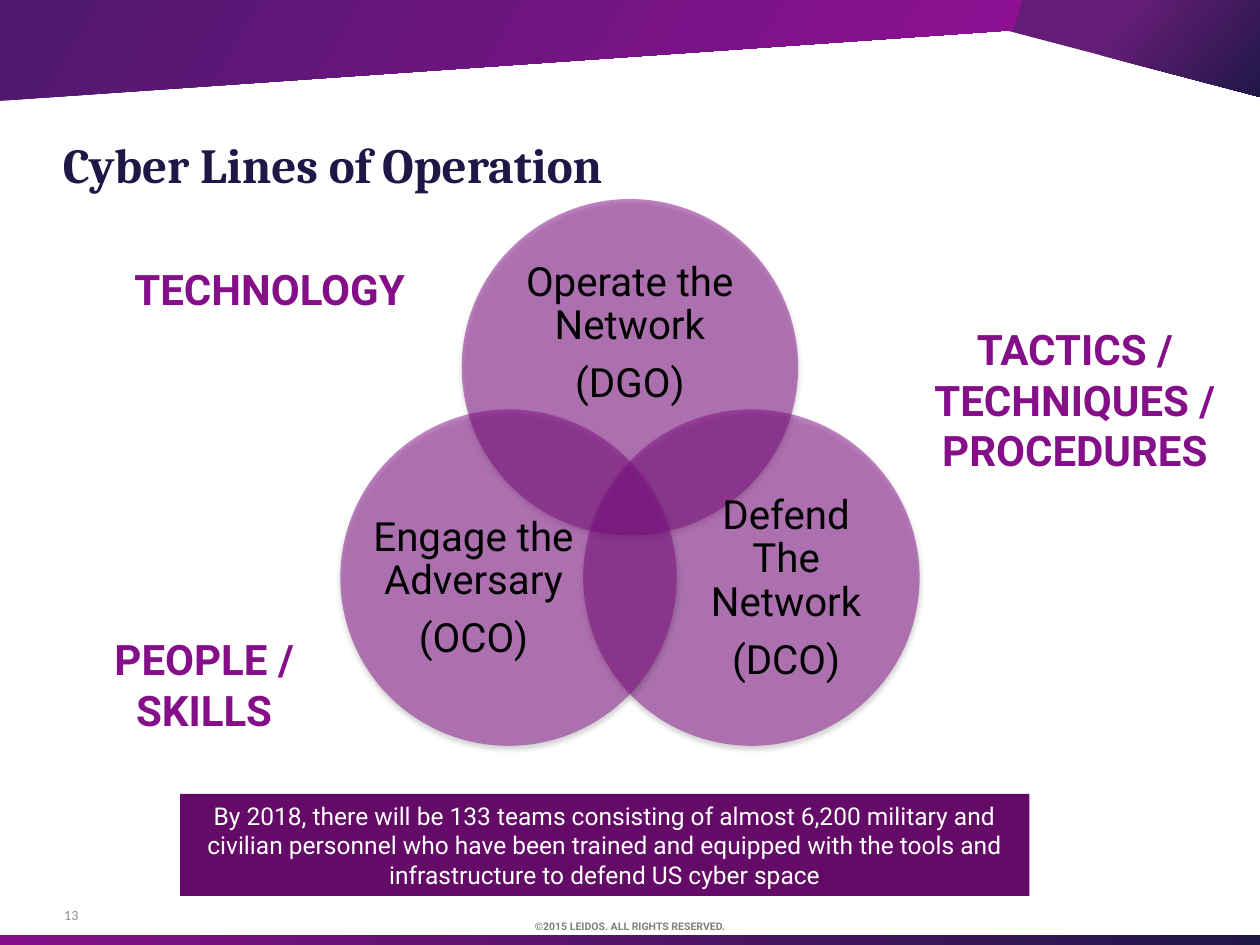
from dataclasses import dataclass
from math import cos, radians, sin

from lxml import etree
from pptx import Presentation
from pptx.dml.color import RGBColor
from pptx.enum.shapes import MSO_SHAPE
from pptx.enum.text import MSO_ANCHOR, PP_ALIGN
from pptx.oxml.ns import qn
from pptx.util import Inches, Pt

RECT, OVAL = MSO_SHAPE.RECTANGLE, MSO_SHAPE.OVAL
TOP, MIDDLE = MSO_ANCHOR.TOP, MSO_ANCHOR.MIDDLE
LEFT, CENTER = PP_ALIGN.LEFT, PP_ALIGN.CENTER
COLS, ROWS = 100, 75


@dataclass(frozen=True)
class Theme:
    """Colours and text formats of the deck."""
    white: str = "FFFFFF"
    navy: str = "201747"
    indigo: str = "4E196D"
    violet: str = "641D76"
    magenta: str = "901094"
    purple: str = "850F89"
    plum: str = "640B67"
    title: tuple = ("Cambria", 28, "201747", True)
    label: tuple = ("Roboto", 24, "850F89", True)
    circle: tuple = ("Roboto", 23, "000000", False)
    note: tuple = ("Roboto", 14, "FFFFFF", False)
    legal: tuple = ("Roboto", 6, "808080", True)
    number: tuple = ("Calibri", 8, "8C8C8C", False)


class Deck:
    """Builds elements on the current slide, placed by grid columns and rows."""

    def __init__(self, theme):
        self.theme = theme
        self.prs = Presentation()
        self.prs.slide_width, self.prs.slide_height = Inches(10), Inches(7.5)
        self.col = self.prs.slide_width / COLS
        self.row = self.prs.slide_height / ROWS
        self.s = self.prs.slides.add_slide(self.prs.slide_layouts[6])

    def place(self, x, y):
        """Turn a grid point into slide lengths."""
        return round(x * self.col), round(y * self.row)

    def box(self, x, y, w, h):
        """Turn a grid box into slide lengths."""
        return *self.place(x, y), *self.place(w, h)

    def paint(self, sp, color):
        """Give a shape a plain fill without line or shadow."""
        sp.shadow.inherit = False
        sp.line.fill.background()
        sp.fill.solid()
        sp.fill.fore_color.rgb = RGBColor.from_string(color)
        return sp

    def blend(self, sp, stops, angle):
        """Give a shape a two-stop gradient at a clockwise angle."""
        self.paint(sp, self.theme.white)
        sp.fill.gradient()
        sp.fill.gradient_angle = -angle % 360
        for stop, (position, color) in zip(sp.fill.gradient_stops, stops):
            stop.position = position
            stop.color.rgb = RGBColor.from_string(color)

    def rect(self, box, color):
        """Add a plain rectangle."""
        return self.paint(self.s.shapes.add_shape(RECT, *self.box(*box)), color)

    def band(self, box, stops, angle):
        """Add a gradient rectangle."""
        self.blend(self.s.shapes.add_shape(RECT, *self.box(*box)), stops, angle)

    def polygon(self, points, stops, angle):
        """Add a closed gradient outline."""
        start, *rest = [self.place(*point) for point in points]
        builder = self.s.shapes.build_freeform(*start)
        builder.add_line_segments(rest, close=True)
        self.blend(builder.convert_to_shape(), stops, angle)

    def circle(self, x, y, radius):
        """Add a half-transparent circle with a soft shadow."""
        box = self.box(x - radius, y - radius, 2 * radius, 2 * radius)
        sp = self.paint(self.s.shapes.add_shape(OVAL, *box), self.theme.purple)
        pr = sp._element.spPr
        fill = pr.find(qn("a:solidFill"))[0]
        etree.SubElement(fill, qn("a:alpha"), val="50000")
        shadow = etree.SubElement(
            pr.find(qn("a:effectLst")), qn("a:outerShdw"), blurRad=str(Pt(3.1)),
            dist=str(Pt(1.8)), dir="5400000", rotWithShape="0")
        black = etree.SubElement(shadow, qn("a:srgbClr"), val="000000")
        etree.SubElement(black, qn("a:alpha"), val="35000")

    def fill_text(self, sp, style, *lines, align=CENTER, anchor=TOP,
                  insets=(0.1, 0.05, 0.1, 0.05), spacing=None, gap=0):
        """Fill a shape with one paragraph per line."""
        tf = sp.text_frame
        sides = ("margin_left", "margin_top", "margin_right", "margin_bottom")
        frame = dict(zip(sides, map(Inches, insets)))
        frame.update(word_wrap=True, vertical_anchor=anchor)
        for key, value in frame.items():
            setattr(tf, key, value)
        name, size, color, bold = style
        for i, line in enumerate(lines):
            p = tf.paragraphs[0] if i == 0 else tf.add_paragraph()
            p.alignment, p.line_spacing = align, spacing
            if i:
                p.space_before = Pt(gap)
            r = p.add_run()
            r.text = line
            for key, value in dict(name=name, size=Pt(size), bold=bold).items():
                setattr(r.font, key, value)
            r.font.color.rgb = RGBColor.from_string(color)

    def text(self, box, style, *lines, **layout):
        """Add a text box."""
        sp = self.s.shapes.add_textbox(*self.box(*box))
        self.fill_text(sp, style, *lines, **layout)


def main():
    """Build the slide and save it."""
    t = Theme()
    d = Deck(t)
    d.polygon([(80.9, 0), (100, 0), (100, 7.7), (79.8, 2.4)],
              [(0.4, t.violet), (1, t.navy)], 40)
    d.polygon([(0, 8), (0, 0), (81.1, 0), (80.4, 2.4)],
              [(0, t.indigo), (1, t.magenta)], 30)
    d.band((0, 74.2, COLS, 0.8), [(0, t.purple), (1, t.navy)], 0)
    d.text((0, 72.5, COLS, 2.1), t.legal, "©2015 LEIDOS. ALL RIGHTS RESERVED.")
    d.text((5.1, 70.6, 23.3, 4), t.number, "13", align=LEFT, anchor=MIDDLE,
           insets=(0, 0.05, 0, 0.05))
    d.fill_text(
        d.rect((14.3, 63, 67.4, 8.1), t.plum), t.note,
        "By 2018, there will be 133 teams consisting of almost 6,200 military and "
        "civilian personnel who have been trained and equipped with the tools and "
        "infrastructure to defend US cyber space", anchor=MIDDLE)

    venn = [
        (-90, (40.2, 20.5, 19.6, 12), "Operate the Network", "(DGO)"),
        (30, (54.4, 39.4, 16, 14.7), "Defend The Network", "(DCO)"),
        (150, (29.6, 39.4, 16, 14.7), "Engage the Adversary", "(OCO)"),
    ]
    for angle, box, *lines in venn:
        a = radians(angle)
        d.circle(50 + 11.13 * cos(a), 40.28 + 11.13 * sin(a), 13.35)
        d.text(box, t.circle, *lines, anchor=MIDDLE, insets=(0, 0, 0, 0),
               spacing=0.9, gap=8.5)

    for x, y, h, label in [(8.3, 20.4, 5, "TECHNOLOGY"),
                           (72.2, 25.2, 13.1, "TACTICS / TECHNIQUES / PROCEDURES"),
                           (3.1, 49.8, 9.1, "PEOPLE / SKILLS")]:
        d.text((x, y, 26.2, h), t.label, label)
    d.text((5, 8.1, 90, 10.4), t.title, "Cyber Lines of Operation", align=LEFT,
           anchor=MIDDLE, insets=(0, 0.05, 0.1, 0.05), spacing=Pt(30))
    d.prs.save("out.pptx")


if __name__ == "__main__":
    main()
